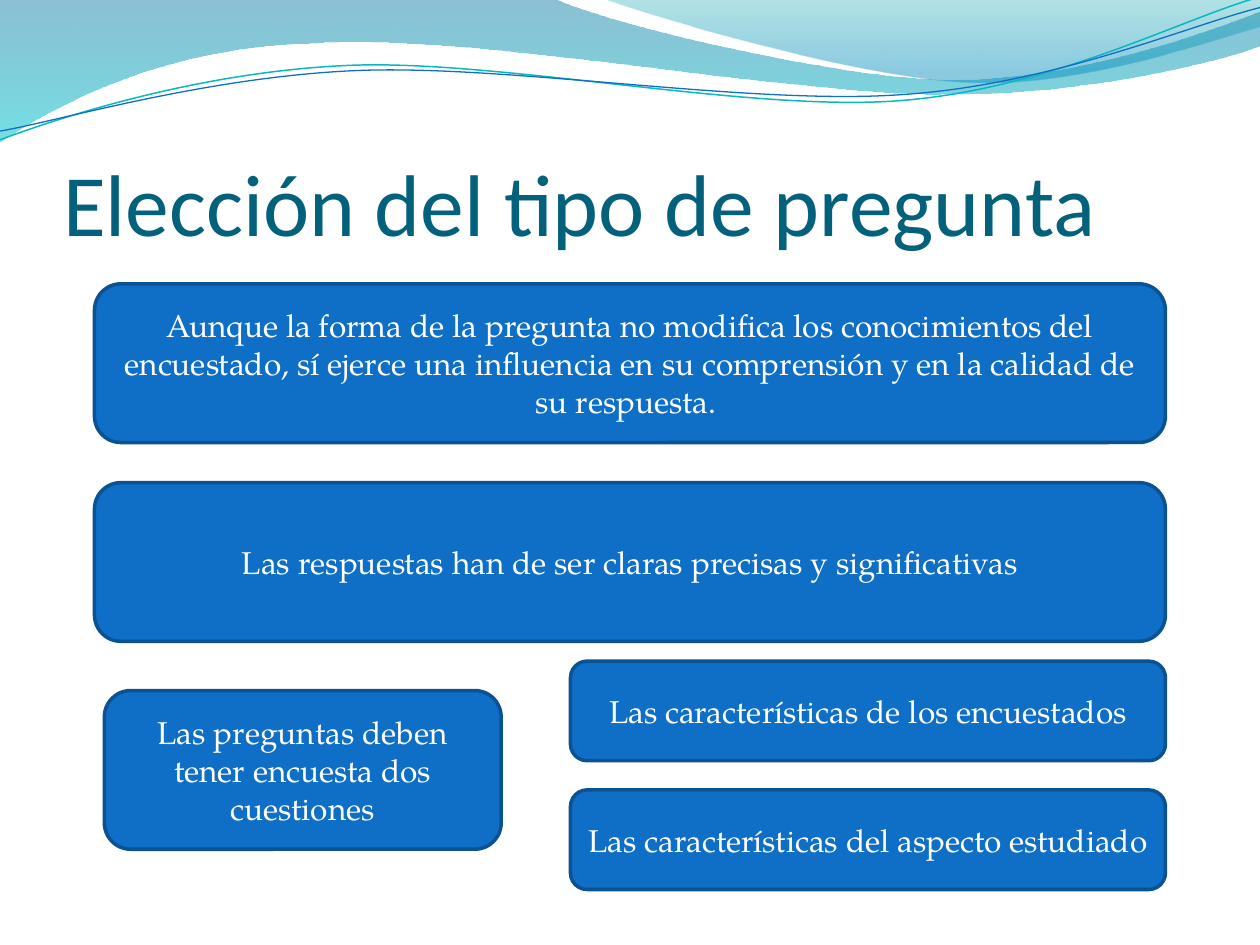
"""Build the slide about choosing the type of question."""
from dataclasses import dataclass
from typing import Optional

from lxml.etree import SubElement
from pptx import Presentation
from pptx.dml.color import RGBColor
from pptx.enum.shapes import MSO_SHAPE as Preset
from pptx.enum.text import MSO_ANCHOR as Anchor, PP_ALIGN as Align
from pptx.oxml.ns import qn
from pptx.oxml.xmlchemy import OxmlElement
from pptx.util import Pt

BLUE = RGBColor(0x0F, 0x6F, 0xC6)
DARK_BLUE = RGBColor(0x0B, 0x52, 0x92)
TITLE_TEAL = RGBColor(0x04, 0x61, 0x7B)
WHITE = RGBColor(0xFF, 0xFF, 0xFF)
LINE_TEAL = RGBColor(0x0A, 0xB8, 0xBF)
BAND_BLUE = RGBColor(0x00, 0x74, 0xA1)
BAND_TEAL = RGBColor(0x00, 0xC6, 0xCF)
CREST_TEAL = RGBColor(0x00, 0xA1, 0xA9)
CREST_BLUE = RGBColor(0x00, 0x8B, 0xBF)

TITLE_FONT = "Calibri"
BODY_FONT = "TeX Gyre Pagella"
WIDE, TALL = 612, 90.7
HALF_LEFT, HALF_WIDE, SHORT = 326, 340, 56.9

Point = tuple[float, float]


@dataclass(frozen=True)
class Stop:
    position: float
    color: RGBColor
    opacity: int


@dataclass(frozen=True)
class Wave:
    start: Point
    segments: list[tuple[Point, ...]]
    stops: tuple[Stop, ...] = ()
    line_color: Optional[RGBColor] = None
    line_width: float = 0


@dataclass(frozen=True)
class Box:
    left: float
    top: float
    width: float
    height: float
    text: str


WAVES = [
    Wave((0, 0), [
        ((316.8, -0.7),),
        ((342.7, 12.2), (478.1, 45.4), (545.8, 45.4)),
        ((614.2, 45.4), (689.8, 18.7), (720, 6.5)),
        ((720.7, 25.9),),
        ((707.8, 31.7), (626.4, 54.7), (537.1, 54)),
        ((447.8, 54), (275, 20.2), (185, 24.5)),
        ((92.9, 25.9), (33.1, 59.8), (-0.7, 81.4)),
        ((0, 0),),
    ], stops=(Stop(0, BAND_BLUE, 45), Stop(1, BAND_TEAL, 55))),
    Wave((344.9, -0.7), [
        ((366.5, 7.9), (491, 44.6), (553.7, 46.8)),
        ((616.3, 49.7), (691.9, 23), (720, 15.1)),
        ((720, 0),),
        ((344.9, -0.7),),
    ], stops=(Stop(0, CREST_TEAL, 30), Stop(0.8, CREST_BLUE, 45))),
    Wave((0, 79.9), [
        ((34.6, 67), (113.8, 41), (199.4, 37.4)),
        ((284.4, 33.8), (427, 64.1), (513.4, 57.6)),
        ((599.8, 51.1), (675.4, 10.8), (718.6, -1.4)),
    ], line_color=LINE_TEAL, line_width=0.85),
    Wave((0, 74.9), [
        ((33.8, 69.1), (118.1, 43.9), (203.8, 40.3)),
        ((290.2, 36.7), (429.8, 60.5), (516.2, 54)),
        ((601.9, 48.2), (677.5, 15.1), (720, 4.3)),
    ], line_color=BLUE, line_width=0.75),
]

TITLE = Box(36, 55.4, 653.8, 90, "Elección del tipo de pregunta")

BOXES = [
    Box(54, 162.2, WIDE, TALL,
        "Aunque la forma de la pregunta no modifica los conocimientos del "
        "encuestado, sí ejerce una influencia en su comprensión y en la "
        "calidad de su respuesta. "),
    Box(54, 275.8, WIDE, TALL,
        "Las respuestas han de ser claras precisas y significativas"),
    Box(59.6, 394.6, 226.8, TALL,
        "Las preguntas deben tener encuesta dos cuestiones"),
    Box(HALF_LEFT, 377.8, HALF_WIDE, SHORT,
        "Las características de los encuestados"),
    Box(HALF_LEFT, 451.4, HALF_WIDE, SHORT,
        "Las características del aspecto estudiado"),
]


def bend_segments(shape, segments: list[tuple[Point, ...]]) -> None:
    """Turn each run of three control points into one cubic curve."""
    lines = iter(list(shape.element.iter(qn("a:lnTo"))))
    for segment in segments:
        parts = [next(lines) for _ in segment]
        if len(parts) == 1:
            continue
        curve = OxmlElement("a:cubicBezTo")
        parts[0].addprevious(curve)
        for part in parts:
            curve.append(part[0])
            part.getparent().remove(part)


def fill_gradient(shape, stops: tuple[Stop, ...]) -> None:
    """Fill a shape from top to bottom with translucent colours."""
    shape.fill.gradient()
    shape.fill.gradient_angle = 270
    for target, stop in zip(shape.fill.gradient_stops, stops):
        target.position = stop.position
        target.color.rgb = stop.color
    colors = shape.element.spPr.iter(qn("a:srgbClr"))
    for color, stop in zip(list(colors), stops):
        SubElement(color, qn("a:alpha")).set("val", str(stop.opacity * 1000))


def draw_wave(slide, wave: Wave) -> None:
    """Draw a gradient band or a thin wavy line."""
    points = [(Pt(x), Pt(y)) for segment in wave.segments for x, y in segment]
    builder = slide.shapes.build_freeform(Pt(wave.start[0]), Pt(wave.start[1]))
    builder.add_line_segments(points, close=bool(wave.stops))
    shape = builder.convert_to_shape()
    bend_segments(shape, wave.segments)
    shape.shadow.inherit = False
    if wave.stops:
        fill_gradient(shape, wave.stops)
        shape.line.fill.background()
    else:
        shape.fill.background()
        shape.line.color.rgb = wave.line_color
        shape.line.width = Pt(wave.line_width)


def write_text(shape, text: str, font_name: str, size: float,
               color: RGBColor, align: Align, anchor: Anchor) -> None:
    """Write one wrapped paragraph into a shape."""
    frame = shape.text_frame
    frame.word_wrap = True
    frame.vertical_anchor = anchor
    paragraph = frame.paragraphs[0]
    paragraph.text = text
    paragraph.alignment = align
    paragraph.font.name = font_name
    paragraph.font.size = Pt(size)
    paragraph.font.color.rgb = color


def draw_title(slide, title: Box) -> None:
    """Draw the slide title."""
    shape = slide.shapes.add_textbox(Pt(title.left), Pt(title.top),
                                     Pt(title.width), Pt(title.height))
    frame = shape.text_frame
    frame.margin_left = frame.margin_right = frame.margin_bottom = Pt(0)
    write_text(shape, title.text, TITLE_FONT, 50, TITLE_TEAL,
               Align.LEFT, Anchor.BOTTOM)


def draw_box(slide, box: Box) -> None:
    """Draw a rounded box with centred text."""
    shape = slide.shapes.add_shape(Preset.ROUNDED_RECTANGLE, Pt(box.left),
                                   Pt(box.top), Pt(box.width), Pt(box.height))
    shape.shadow.inherit = False
    shape.fill.solid()
    shape.fill.fore_color.rgb = BLUE
    shape.line.color.rgb = DARK_BLUE
    shape.line.width = Pt(2)
    write_text(shape, box.text, BODY_FONT, 18, WHITE,
               Align.CENTER, Anchor.MIDDLE)


def main() -> None:
    """Build and save the presentation."""
    presentation = Presentation()
    presentation.slide_width, presentation.slide_height = Pt(720), Pt(540)
    slide = presentation.slides.add_slide(presentation.slide_layouts[6])
    for wave in WAVES:
        draw_wave(slide, wave)
    draw_title(slide, TITLE)
    for box in BOXES:
        draw_box(slide, box)
    presentation.save("out.pptx")


if __name__ == "__main__":
    main()
